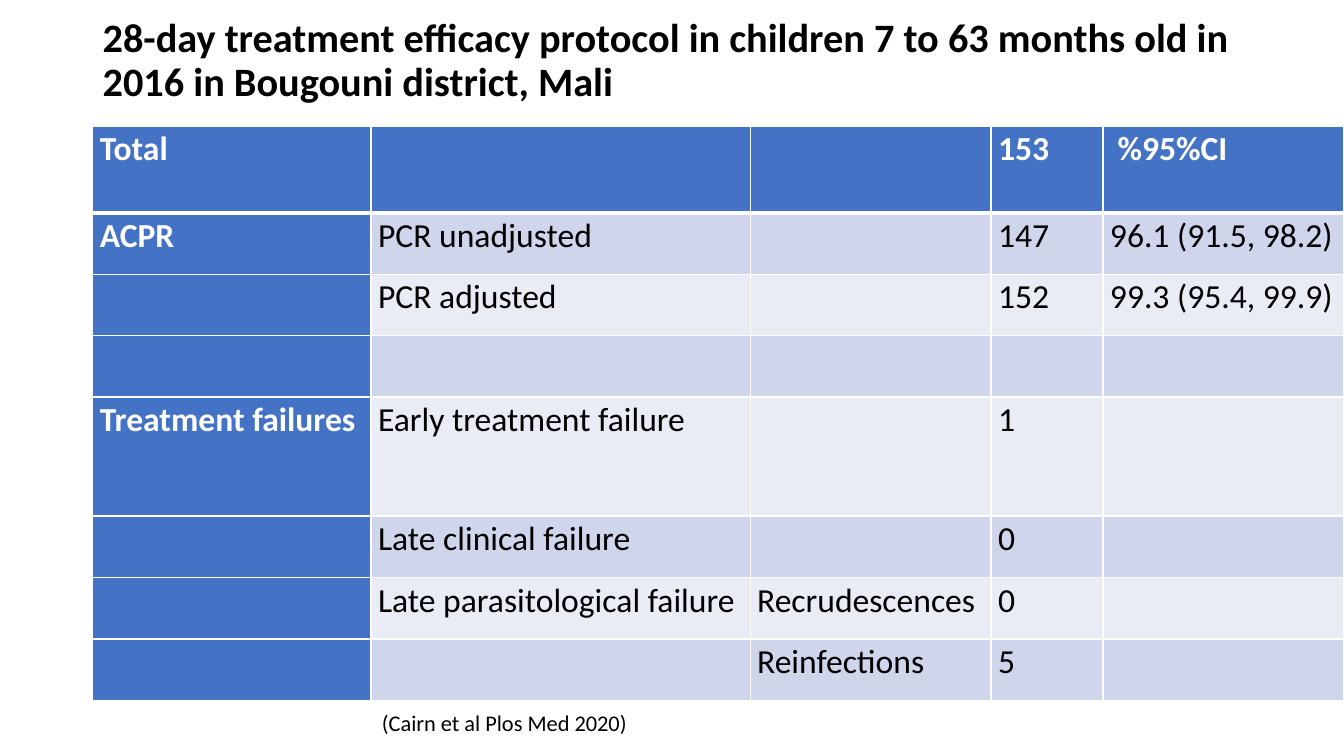
from lxml.etree import SubElement
from pptx import Presentation
from pptx.dml.color import RGBColor as Color
from pptx.enum.text import MSO_ANCHOR as Anchor
from pptx.oxml.ns import qn
from pptx.util import Inches, Pt

COLORS = {"ink": "000000", "white": "FFFFFF", "blue": "4472C4",
          "band": "CFD5EA", "pale": "E9EBF5"}
COLUMN_WIDTHS = [2.76, 3.76, 2.39, 1.11, 2.39]
ROW_HEIGHTS = [0.86, 0.61, 0.61, 0.61, 1.18, 0.61, 0.61, 0.61]
OUTCOMES = [
    ["Total", "", "", "153", " %95%CI"],
    ["ACPR", "PCR unadjusted", "", "147", "96.1 (91.5, 98.2)"],
    ["", "PCR adjusted", "", "152", "99.3 (95.4, 99.9)"],
    ["", "", "", "", ""],
    ["Treatment failures", "Early treatment failure", "", "1", ""],
    ["", "Late clinical failure", "", "0", ""],
    ["", "Late parasitological failure", "Recrudescences", "0", ""],
    ["", "", "Reinfections", "5", ""],
]


class SlideBuilder:
    """Draws styled text and tables on one slide."""

    def __init__(self, deck, font="Calibri"):
        self.page = deck.slides.add_slide(deck.slide_layouts[6])
        self.font = font

    def fill_text(self, frame, text, size, color="ink", bold=False, **spacing):
        para = frame.paragraphs[0]
        for name, value in spacing.items():
            setattr(para, name, value)
        span = para.add_run()
        span.text = text
        formats = {"name": self.font, "size": Pt(size), "bold": bold}
        for name, value in formats.items():
            setattr(span.font, name, value)
        span.font.color.rgb = Color.from_string(COLORS[color])

    def text(self, area, text, size, bold=False, frame_format=None, **spacing):
        box = self.page.shapes.add_textbox(*map(Inches, area))
        formats = {"word_wrap": True, "vertical_anchor": Anchor.TOP}
        formats.update(frame_format or {})
        for name, value in formats.items():
            setattr(box.text_frame, name, value)
        self.fill_text(box.text_frame, text, size, bold=bold, **spacing)

    def borders(self, cell, **widths):
        properties = cell._tc.get_or_add_tcPr()
        for position, side in enumerate("LRTB"):
            line = SubElement(properties, qn(f"a:ln{side}"),
                              w=str(Pt(widths.get(side, 1))))
            fill = SubElement(line, qn("a:solidFill"))
            SubElement(fill, qn("a:srgbClr"), val=COLORS["white"])
            properties.insert(position, line)

    def cell(self, cell, text, row, column):
        heading = row == 0 or column == 0
        background = "blue" if heading else "band" if row % 2 else "pale"
        cell.fill.solid()
        cell.fill.fore_color.rgb = Color.from_string(COLORS[background])
        margins = {"margin_left": 0.07, "margin_right": 0.07,
                   "margin_top": 0, "margin_bottom": 0}
        for name, value in margins.items():
            setattr(cell, name, Inches(value))
        self.borders(cell, T=3 if row == 1 else 1, B=3 if row == 0 else 1)
        if text:
            self.fill_text(cell.text_frame, text, 24,
                           "white" if heading else "ink", heading,
                           line_spacing=1.07, space_after=Pt(8))

    def table(self, left, top, widths, heights, rows):
        area = map(Inches, (left, top, sum(widths), sum(heights)))
        table = self.page.shapes.add_table(len(rows), len(widths), *area).table
        for column, width in zip(table.columns, widths):
            column.width = Inches(width)
        for row, height in zip(table.rows, heights):
            row.height = Inches(height)
        for row, texts in enumerate(rows):
            for column, text in enumerate(texts):
                self.cell(table.cell(row, column), text, row, column)


def main():
    deck = Presentation()
    deck.slide_width, deck.slide_height = Inches(13.33), Inches(7.5)
    slide = SlideBuilder(deck)
    slide.text((0.92, 0.11, 11.5, 1.45),
               "28-day treatment efficacy protocol in children 7 to 63 months old "
               "in 2016 in Bougouni district, Mali",
               28.8, True, {"margin_top": Inches(0.07)}, line_spacing=0.9)
    slide.table(0.92, 1.25, COLUMN_WIDTHS, ROW_HEIGHTS, OUTCOMES)
    slide.text((3.69, 6.99, 2.66, 0.37), "(Cairn et al Plos Med 2020)", 16,
               frame_format={"word_wrap": False})
    deck.save("out.pptx")


if __name__ == "__main__":
    main()
